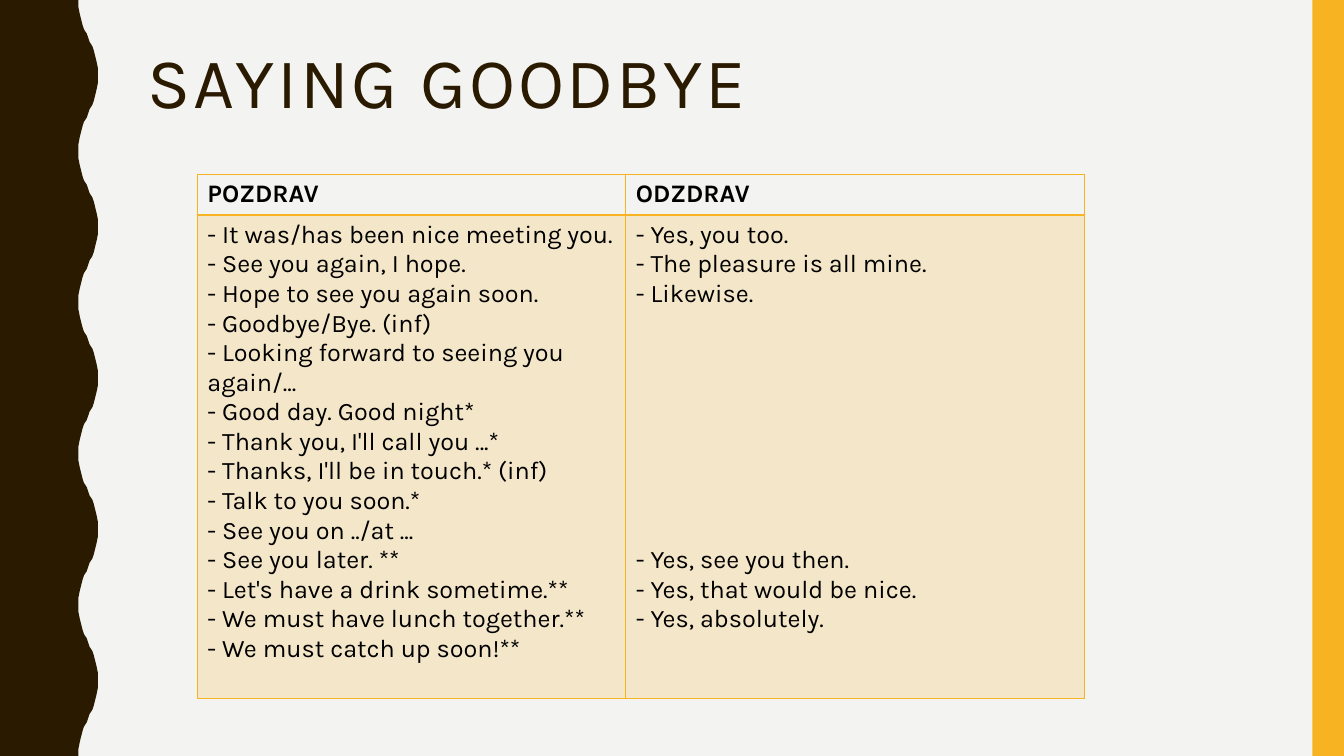
"""Builds the slide on ways of saying goodbye."""
from lxml import etree
from pptx import Presentation
from pptx.dml.color import RGBColor
from pptx.enum.shapes import MSO_SHAPE
from pptx.oxml.ns import qn
from pptx.util import Pt

RECT = MSO_SHAPE.RECTANGLE

TITLE = "SAYING GOODBYE"
HEADERS = ["POZDRAV", "ODZDRAV"]
GREETINGS = [
    "- It was/has been nice meeting you.",
    "- See you again, I hope.",
    "- Hope to see you again soon.",
    "- Goodbye/Bye. (inf)",
    "- Looking forward to seeing you again/...",
    "- Good day. Good night*",
    "- Thank you, I'll call you ...*",
    "- Thanks, I'll be in touch.* (inf)",
    "- Talk to you soon.*",
    "- See you on ../at ...",
    "- See you later. **",
    "- Let's have a drink sometime.**",
    "- We must have lunch together.**",
    "- We must catch up soon!**",
]
REPLIES = [
    "- Yes, you too.",
    "- The pleasure is all mine.",
    "- Likewise.",
    "- Yes, see you then.",
    "- Yes, that would be nice.",
    "- Yes, absolutely.",
]
LATER_REPLY, LATER_GAP = 3, 169

THEME = {
    "font": "Karla", "title": 51, "body": 18,
    "paper": "F3F3F2", "brown": "2A1A00", "gold": "F8B323", "ink": "000000",
    "tint": 20, "thin": 1, "thick": 2,
}
WIDTH, HEIGHT = 960, 540
BAR_WIDTH = 22.5
TABLE_LEFT, TABLE_TOP = 141, 124.5
COLUMNS, ROWS = [306, 327.6], [29.2, 345]
WAVE_PERIOD, WAVE_MIDDLE = 108, 63
WAVE_QUARTER = [(56.2, 0), (56.3, 5), (56.9, 10), (57.7, 14.4),
                (58.6, 18), (60, 21), (61.5, 24), (63, 27)]


def color(name):
    return RGBColor.from_string(THEME[name])


def paint(shape, name):
    shape.shadow.inherit = False
    shape.fill.solid()
    shape.fill.fore_color.rgb = color(name)
    shape.line.fill.background()


def style(p, size, name, bold=False):
    for r in p.runs:
        r.font.name = THEME["font"]
        r.font.size = Pt(THEME[size])
        r.font.bold = bold
        r.font.color.rgb = color(name)


def add_wave(s):
    half = WAVE_PERIOD / 2
    rise = WAVE_QUARTER + [(2 * WAVE_MIDDLE - x, half - y)
                           for x, y in reversed(WAVE_QUARTER[:-1])]
    wave = rise + [(x, WAVE_PERIOD - y) for x, y in reversed(rise[:-1])]
    edge = [(x, y + start) for start in range(0, HEIGHT, WAVE_PERIOD)
            for x, y in wave]
    builder = s.shapes.build_freeform(0, 0, scale=Pt(1))
    builder.add_line_segments(edge + [(0, HEIGHT)], close=True)
    paint(builder.convert_to_shape(), "brown")


def add_title(s):
    sp = s.shapes.add_textbox(Pt(98.6), Pt(30.2), Pt(801), Pt(117))
    tf = sp.text_frame
    tf.word_wrap = True
    p = tf.paragraphs[0]
    p.text = TITLE
    p.line_spacing = 0.9
    style(p, "title", "brown")
    p.runs[0].font._element.set("spc", "200")


def set_borders(cell, top, bottom):
    tc_pr = cell._tc.get_or_add_tcPr()
    widths = {"lnL": "thin", "lnR": "thin", "lnT": top, "lnB": bottom}
    for side, width in widths.items():
        ln = etree.SubElement(tc_pr, qn("a:" + side), w=str(Pt(THEME[width])))
        fill = etree.SubElement(ln, qn("a:solidFill"))
        etree.SubElement(fill, qn("a:srgbClr"), val=THEME["gold"])


def tint(cell):
    cell.fill.solid()
    cell.fill.fore_color.rgb = color("gold")
    clr = cell._tc.tcPr.find(".//" + qn("a:solidFill") + "[last()]/..")
    clr = cell._tc.tcPr.find(qn("a:solidFill")).find(qn("a:srgbClr"))
    etree.SubElement(clr, qn("a:alpha"), val=str(THEME["tint"] * 1000))


def add_phrase_table(s):
    frame = s.shapes.add_table(len(ROWS), len(COLUMNS), Pt(TABLE_LEFT),
                               Pt(TABLE_TOP), Pt(sum(COLUMNS)), Pt(sum(ROWS)))
    table = frame.table
    table.first_row = table.horz_banding = False
    for row, height in zip(table.rows, ROWS):
        row.height = Pt(height)
    for i, (width, header, phrases) in enumerate(
            zip(COLUMNS, HEADERS, [GREETINGS, REPLIES])):
        table.columns[i].width = Pt(width)
        head, body = table.cell(0, i), table.cell(1, i)
        head.text = header
        body.text = "\n".join(phrases)
        set_borders(head, "thin", "thick")
        set_borders(body, "thick", "thin")
        head.fill.background()
        tint(body)
        style(head.text_frame.paragraphs[0], "body", "ink", bold=True)
        for p in body.text_frame.paragraphs:
            style(p, "body", "ink")
    replies = table.cell(1, 1).text_frame.paragraphs
    replies[LATER_REPLY].space_before = Pt(LATER_GAP)


def main():
    prs = Presentation()
    prs.slide_width, prs.slide_height = Pt(WIDTH), Pt(HEIGHT)
    s = prs.slides.add_slide(prs.slide_layouts[6])
    s.background.fill.solid()
    s.background.fill.fore_color.rgb = color("paper")
    add_wave(s)
    bar = s.shapes.add_shape(RECT, Pt(WIDTH - BAR_WIDTH), 0,
                             Pt(BAR_WIDTH), Pt(HEIGHT))
    paint(bar, "gold")
    add_title(s)
    add_phrase_table(s)
    prs.save("out.pptx")


if __name__ == "__main__":
    main()
